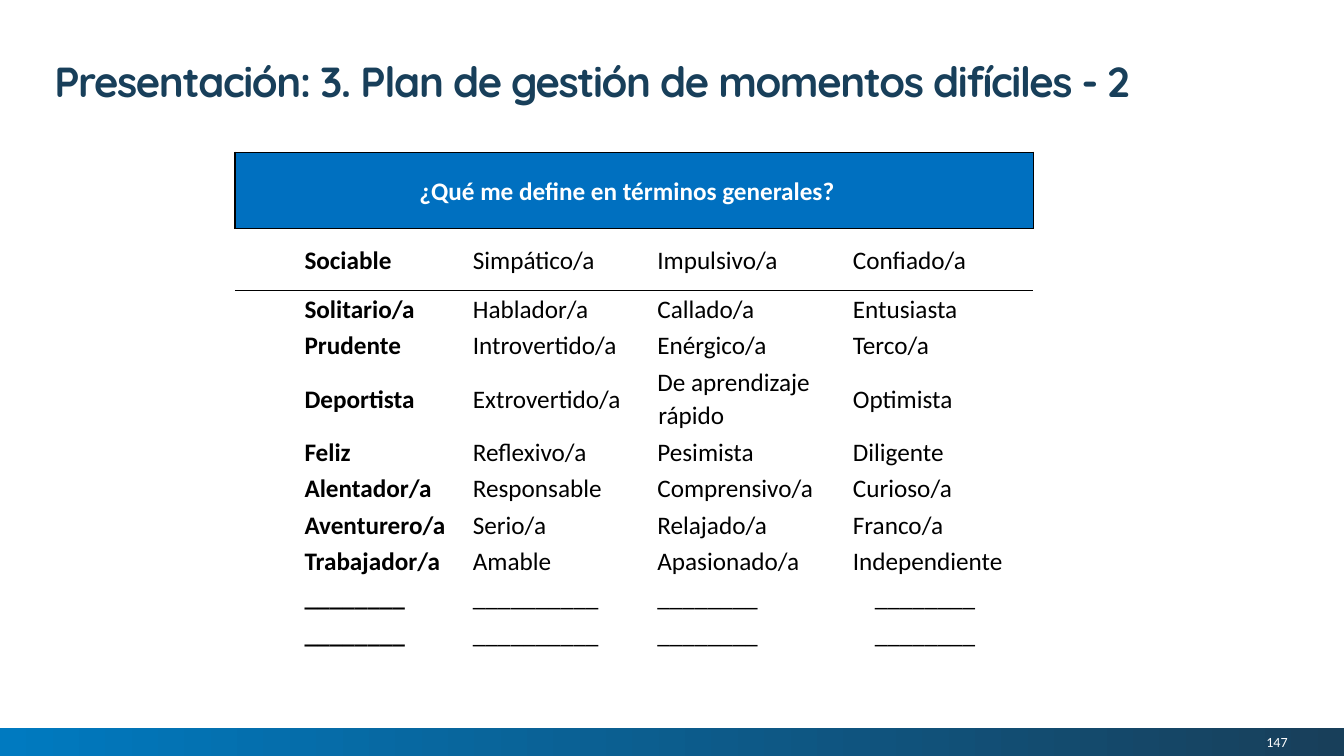
from dataclasses import dataclass

import lxml.etree
import pptx
import pptx.dml.color
import pptx.enum.shapes
import pptx.enum.text
import pptx.oxml.ns
import pptx.table
import pptx.util

Inches = pptx.util.Inches
Pt = pptx.util.Pt
qn = pptx.oxml.ns.qn
ALIGN = pptx.enum.text.PP_ALIGN
MIDDLE = pptx.enum.text.MSO_ANCHOR.MIDDLE

COLORS = {
    "navy": "183F5A",
    "azure": "007AC0",
    "header": "0070C0",
    "white": "FFFFFF",
    "black": "000000",
}
NO_STYLE = "{2D5ABB26-0587-4C30-8999-92F81FD0307C}"

COLUMN_WIDTHS = [2.31, 1.88, 1.72, 0.22, 1.79]
HEADER_HEIGHT, FIRST_HEIGHT, TALL_HEIGHT, ROW_HEIGHT = 0.76, 0.61, 0.7, 0.36
BLANKS = ("________", "__________", "________", "________")
TRAITS = [
    ("Sociable", "Simpático/a", "Impulsivo/a", "Confiado/a"),
    ("Solitario/a", "Hablador/a", "Callado/a", "Entusiasta"),
    ("Prudente", "Introvertido/a", "Enérgico/a", "Terco/a"),
    ("Deportista", "Extrovertido/a", "De aprendizaje rápido", "Optimista"),
    ("Feliz", "Reflexivo/a", "Pesimista", "Diligente"),
    ("Alentador/a", "Responsable", "Comprensivo/a", "Curioso/a"),
    ("Aventurero/a", "Serio/a", "Relajado/a", "Franco/a"),
    ("Trabajador/a", "Amable", "Apasionado/a", "Independiente"),
    BLANKS,
    BLANKS,
]


@dataclass
class TextStyle:
    size: float
    color: str = "black"
    bold: bool = False
    font: str = "Calibri"
    align: ALIGN = ALIGN.LEFT


@dataclass
class CellStyle:
    text: TextStyle
    margin: float = 0.01
    indent: float = -0.01


BODY = TextStyle(18)
HEADER = CellStyle(TextStyle(18, "white", True, align=ALIGN.CENTER))
TRAIT_STYLES = [
    CellStyle(TextStyle(18, bold=True), 0.69, 0),
    CellStyle(BODY, 0.06),
    CellStyle(BODY),
    CellStyle(BODY),
]
CENTERED = CellStyle(TextStyle(18, align=ALIGN.CENTER))


def rgb(name: str) -> pptx.dml.color.RGBColor:
    return pptx.dml.color.RGBColor.from_string(COLORS[name])


def write(tf, text: str, style: TextStyle):
    """Set the text of a frame and return its paragraph."""
    tf.text = text
    p = tf.paragraphs[0]
    p.alignment = style.align
    font = p.runs[0].font
    font.name, font.size, font.bold = style.font, Pt(style.size), style.bold
    font.color.rgb = rgb(style.color)
    return p


def add_text(s, box: tuple, text: str, style: TextStyle, inset: tuple):
    sp = s.shapes.add_textbox(*map(Inches, box))
    tf = sp.text_frame
    tf.word_wrap = True
    tf.vertical_anchor = MIDDLE
    tf.margin_left = tf.margin_right = Inches(inset[0])
    tf.margin_top = tf.margin_bottom = Inches(inset[1])
    return write(tf, text, style)


def fill_cell(cell: pptx.table._Cell, text: str, style: CellStyle):
    cell.margin_left = cell.margin_bottom = 0
    cell.margin_top, cell.margin_right = Inches(0.01), Inches(0.14)
    cell.vertical_anchor = MIDDLE
    cell.fill.background()
    p = write(cell.text_frame, text, style.text)
    p.line_spacing = 1.07
    pPr = p._p.get_or_add_pPr()
    pPr.set("marL", str(Inches(style.margin)))
    pPr.set("indent", str(Inches(style.indent)))
    return p


def add_borders(cell: pptx.table._Cell, sides: str) -> None:
    """Draw thin black lines on the sides named by L, R, T and B, in that order."""
    tcPr = cell._tc.get_or_add_tcPr()
    for i, side in enumerate(sides):
        ln = lxml.etree.Element(qn(f"a:ln{side}"), w=str(Pt(1)))
        solid = lxml.etree.SubElement(ln, qn("a:solidFill"))
        lxml.etree.SubElement(solid, qn("a:srgbClr"), val=COLORS["black"])
        tcPr.insert(i, ln)


def add_footer(s) -> None:
    sp = s.shapes.add_shape(pptx.enum.shapes.MSO_SHAPE.RECTANGLE,
                            0, Inches(7.22), Inches(13.33), Inches(0.28))
    sp.shadow.inherit = False
    sp.line.fill.background()
    sp.fill.gradient()
    sp.fill.gradient_angle = 0
    for stop, name in zip(sp.fill.gradient_stops, ("azure", "navy")):
        stop.color.rgb = rgb(name)
    add_text(s, (10.97, 7.24, 1.8, 0.24), "147",
             TextStyle(10, "white", align=ALIGN.RIGHT), (0, 0))


def add_title(s) -> None:
    p = add_text(s, (0.44, 0.55, 11.81, 0.54),
                 "Presentación: 3. Plan de gestión de momentos difíciles - 2",
                 TextStyle(30, "navy", True, "Quicksand"), (0.1, 0.05))
    p.line_spacing = Pt(33)
    p.runs[0].font._element.set("spc", "-100")


def add_traits_table(s) -> None:
    heights = [HEADER_HEIGHT, FIRST_HEIGHT] + [
        TALL_HEIGHT if row[0] == "Deportista" else ROW_HEIGHT for row in TRAITS[1:]]
    frame = s.shapes.add_table(len(heights), len(COLUMN_WIDTHS), Inches(2.33), Inches(1.51),
                               Inches(sum(COLUMN_WIDTHS)), Inches(sum(heights)))
    table = frame.table
    table.first_row = table.horz_banding = False
    table._tbl.tblPr.find(qn("a:tableStyleId")).text = NO_STYLE
    for column, width in zip(table.columns, COLUMN_WIDTHS):
        column.width = Inches(width)
    for row, height in zip(table.rows, heights):
        row.height = Inches(height)

    header = table.cell(0, 0)
    header.merge(table.cell(0, 4))
    p = fill_cell(header, "¿Qué me define en términos generales?", HEADER)
    p.space_after = Pt(8)
    header.fill.solid()
    header.fill.fore_color.rgb = rgb("header")
    add_borders(header, "LRTB")

    for r, traits in enumerate(TRAITS, start=1):
        blank = traits is BLANKS
        # The narrow column joins the last one on blank rows, the third elsewhere.
        first = 3 if blank else 2
        table.cell(r, first).merge(table.cell(r, first + 1))
        columns = (0, 1, 2, 3 if blank else 4)
        styles = TRAIT_STYLES[:3] + [CENTERED if blank else TRAIT_STYLES[3]]
        for c, text, style in zip(columns, traits, styles):
            fill_cell(table.cell(r, c), text, style)
    for c in range(len(COLUMN_WIDTHS)):
        add_borders(table.cell(1, c), "T")


def main() -> None:
    prs = pptx.Presentation()
    prs.slide_width, prs.slide_height = Inches(13.33), Inches(7.5)
    s = prs.slides.add_slide(prs.slide_layouts[6])
    add_footer(s)
    add_title(s)
    add_traits_table(s)
    prs.save("out.pptx")


if __name__ == "__main__":
    main()
